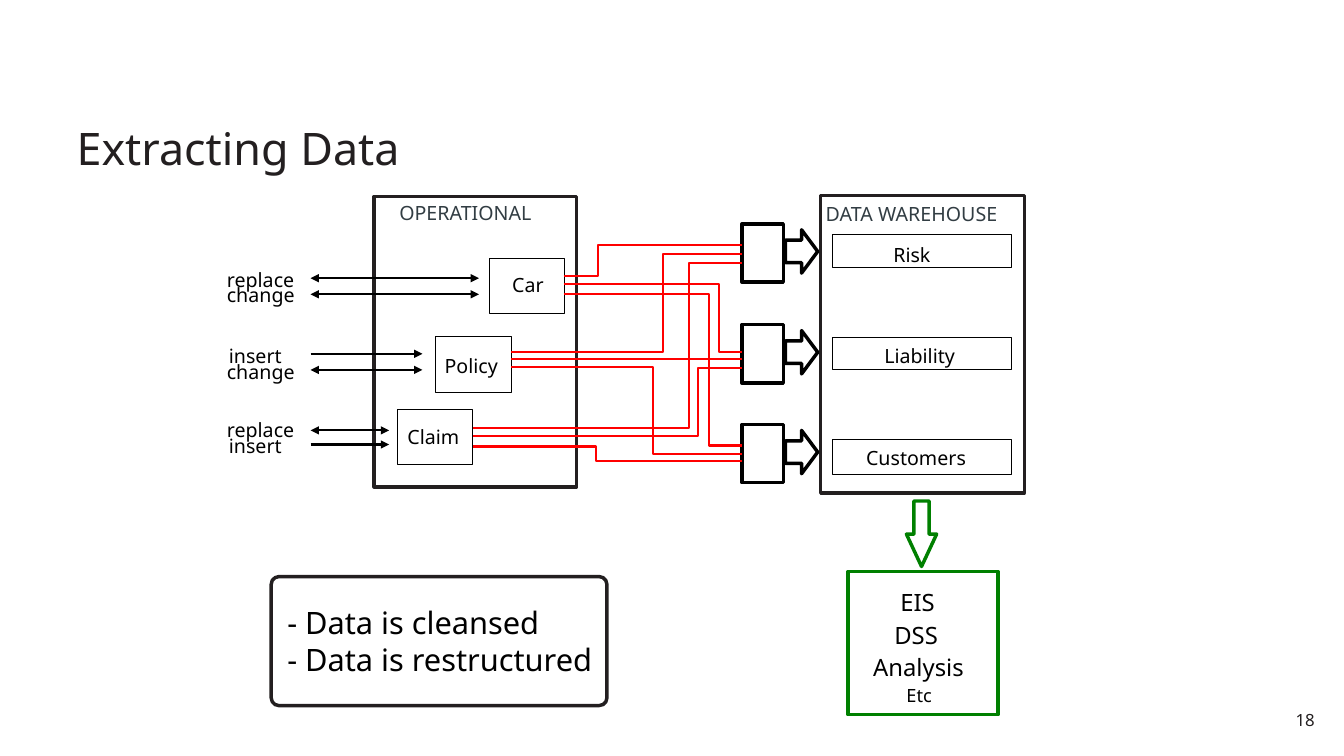
from typing import NamedTuple

from lxml import etree
from pptx import Presentation
from pptx.dml.color import RGBColor
from pptx.enum import shapes, text
from pptx.oxml import ns
from pptx.util import Inches, Pt

FONT = "Noto Sans"
INK, SLATE, BLACK, GREEN, RED = "231F20", "323D43", "000000", "008000", "FF0000"
THICK, MEDIUM, THIN = 2.48, 1.48, 0.71
KIND = shapes.MSO_SHAPE


class Outline(NamedTuple):
    left: float
    top: float
    width: float
    height: float
    color: str = BLACK
    weight: float = THIN
    kind: shapes.MSO_SHAPE = KIND.RECTANGLE
    adjust: tuple[float, ...] = ()


class Label(NamedTuple):
    words: str
    left: float
    top: float
    width: float
    height: float = 0.22
    size: float = 14
    color: str = BLACK


class Flow(NamedTuple):
    y: float
    end: float
    both_ways: bool


FRAMES = [
    Outline(3.71, 1.95, 2.01, 2.88, INK, THICK),
    Outline(8.14, 1.94, 2.02, 2.95, INK, THICK),
    Outline(8.41, 5.67, 1.49, 1.42, GREEN, THICK),
    Outline(8.99, 4.97, 0.3, 0.65, GREEN, THICK, KIND.DOWN_ARROW, (0.5, 1.07)),
    Outline(2.69, 5.72, 3.33, 1.28, INK, THICK, KIND.ROUNDED_RECTANGLE, (0.06,)),
]
SOURCES = [Outline(x, y, 0.75, 0.55) for x, y in ((4.85, 2.56), (4.32, 3.34), (3.94, 4.06))]
SUBJECTS = [Outline(8.26, y, 1.77, h) for y, h in ((2.33, 0.32), (3.35, 0.32), (4.36, 0.35))]
STAGE_TOPS = [2.22, 3.22, 4.21]
STAGES = [Outline(7.36, y, 0.41, 0.58, BLACK, THICK) for y in STAGE_TOPS]
LOADS = [
    Outline(7.79, y + 0.06, 0.32, 0.43, BLACK, THICK, KIND.RIGHT_ARROW, (0.52, 0.5))
    for y in STAGE_TOPS
]

LABELS = [
    Label("OPERATIONAL", 3.96, 1.99, 1.52, color=SLATE),
    Label("DATA WAREHOUSE", 8.19, 2, 1.94, color=SLATE),
    Label("Car", 5.08, 2.71, 0.43),
    Label("Policy", 4.41, 3.51, 0.7),
    Label("Claim", 4.04, 4.22, 0.65),
    Label("Risk", 8.86, 2.41, 0.41),
    Label("Liability", 8.77, 3.41, 0.85),
    Label("Customers", 8.59, 4.42, 1.03),
    Label("replace", 2.25, 2.66, 0.83),
    Label("change", 2.25, 2.81, 0.84),
    Label("insert", 2.27, 3.41, 0.63),
    Label("change", 2.25, 3.57, 0.84),
    Label("replace", 2.25, 4.15, 0.83),
    Label("insert", 2.27, 4.3, 0.63),
    Label("EIS", 8.93, 5.83, 0.43, 0.27, 17),
    Label("DSS", 8.87, 6.16, 0.55, 0.27, 17),
    Label("Analysis", 8.66, 6.48, 0.98, 0.29, 17),
    Label("Etc", 8.99, 6.79, 0.29, size=13),
    Label("- Data is cleansed\n- Data is restructured", 2.85, 5.99, 3.18, 0.76, 22),
]

FLOWS = [
    Flow(2.76, 4.75, True),
    Flow(2.92, 4.75, True),
    Flow(3.51, 4.19, False),
    Flow(3.67, 4.19, True),
    Flow(4.27, 3.86, True),
    Flow(4.41, 3.86, False),
]

# Each wire: source x and y, x of the bend, y at the staging box
WIRE_END = 7.36
WIRES = [
    (5.59, 2.74, 5.93, 2.43),
    (5.59, 2.82, 7.13, 3.49),
    (5.59, 2.92, 7.03, 4.42),
    (5.07, 3.49, 6.58, 2.52),
    (5.07, 3.64, 6.48, 4.5),
    (4.69, 4.25, 6.83, 2.61),
    (4.69, 4.33, 6.92, 3.65),
    (4.69, 4.43, 5.91, 4.57),
]


def rgb(color: str) -> RGBColor:
    return RGBColor.from_string(color)


def set_line(s, color: str, weight: float) -> None:
    s.line.color.rgb = rgb(color)
    s.line.width = Pt(weight)


def set_text(s, words: str, size: float, color: str,
             inset: tuple[float, float] = (0, 0), **paragraph_format) -> None:
    """Fill a text frame; inset is (horizontal, vertical) in inches."""
    tf = s.text_frame
    across, down = map(Inches, inset)
    frame_format = {
        "word_wrap": True, "auto_size": text.MSO_AUTO_SIZE.NONE,
        "margin_left": across, "margin_right": across,
        "margin_top": down, "margin_bottom": down,
    }
    for name, value in frame_format.items():
        setattr(tf, name, value)
    tf.text = words
    for p in tf.paragraphs:
        for name, value in paragraph_format.items():
            setattr(p, name, value)
        for r in p.runs:
            for name, value in {"name": FONT, "size": Pt(size)}.items():
                setattr(r.font, name, value)
            r.font.color.rgb = rgb(color)


def add_outline(sp, o: Outline) -> None:
    s = sp.add_shape(o.kind, *map(Inches, o[:4]))
    for i, value in enumerate(o.adjust):
        s.adjustments[i] = value
    s.shadow.inherit = False
    s.fill.background()
    set_line(s, o.color, o.weight)


def add_label(sp, label: Label) -> None:
    s = sp.add_textbox(*map(Inches, label[1:5]))
    set_text(s, label.words, label.size, label.color)


def add_line(sp, start: float, end: float, y: float, color: str,
             arrows: tuple[str, ...] = ()) -> None:
    """Draw a level line; arrows names the ends (headEnd, tailEnd) with a triangle."""
    s = sp.add_connector(shapes.MSO_CONNECTOR.STRAIGHT,
                         *map(Inches, (start, y, end, y)))
    set_line(s, color, MEDIUM)
    for tag in arrows:
        etree.SubElement(s.line._get_or_add_ln(), ns.qn(f"a:{tag}"), type="triangle")
    etree.SubElement(s._element.spPr, ns.qn("a:effectLst"))


def add_wire(sp, x: float, y: float, bend: float, end_y: float) -> None:
    points = [(bend, y), (bend, end_y), (WIRE_END, end_y)]
    builder = sp.build_freeform(Inches(x), Inches(y))
    builder.add_line_segments([tuple(map(Inches, pt)) for pt in points], close=False)
    s = builder.convert_to_shape()
    s.shadow.inherit = False
    s.fill.background()
    set_line(s, RED, MEDIUM)


def main() -> None:
    prs = Presentation()
    prs.slide_width, prs.slide_height = Inches(13.33), Inches(7.5)
    slide = prs.slides.add_slide(prs.slide_layouts[5])
    sp = slide.shapes

    title = sp.title
    bounds = {"left": 0.68, "top": 0.76, "width": 11.97, "height": 1.02}
    for name, value in bounds.items():
        setattr(title, name, Inches(value))
    title.text_frame.vertical_anchor = text.MSO_ANCHOR.BOTTOM
    set_text(title, "Extracting Data", 32, INK, (0.08, 0.04),
             alignment=text.PP_ALIGN.LEFT, line_spacing=0.9)

    number = sp.add_textbox(*map(Inches, (12.65, 6.98, 0.47, 0.31)))
    set_text(number, "18", 12, INK, (0.08, 0.06), alignment=text.PP_ALIGN.RIGHT)

    for outline in FRAMES + SOURCES + SUBJECTS + STAGES + LOADS:
        add_outline(sp, outline)
    for label in LABELS:
        add_label(sp, label)
    for flow in FLOWS:
        arrows = ("headEnd", "tailEnd") if flow.both_ways else ("tailEnd",)
        add_line(sp, 3.08, flow.end, flow.y, BLACK, arrows)
    for wire in WIRES:
        add_wire(sp, *wire)
    add_line(sp, 5.07, WIRE_END, 3.56, RED)

    prs.save("out.pptx")


if __name__ == "__main__":
    main()
